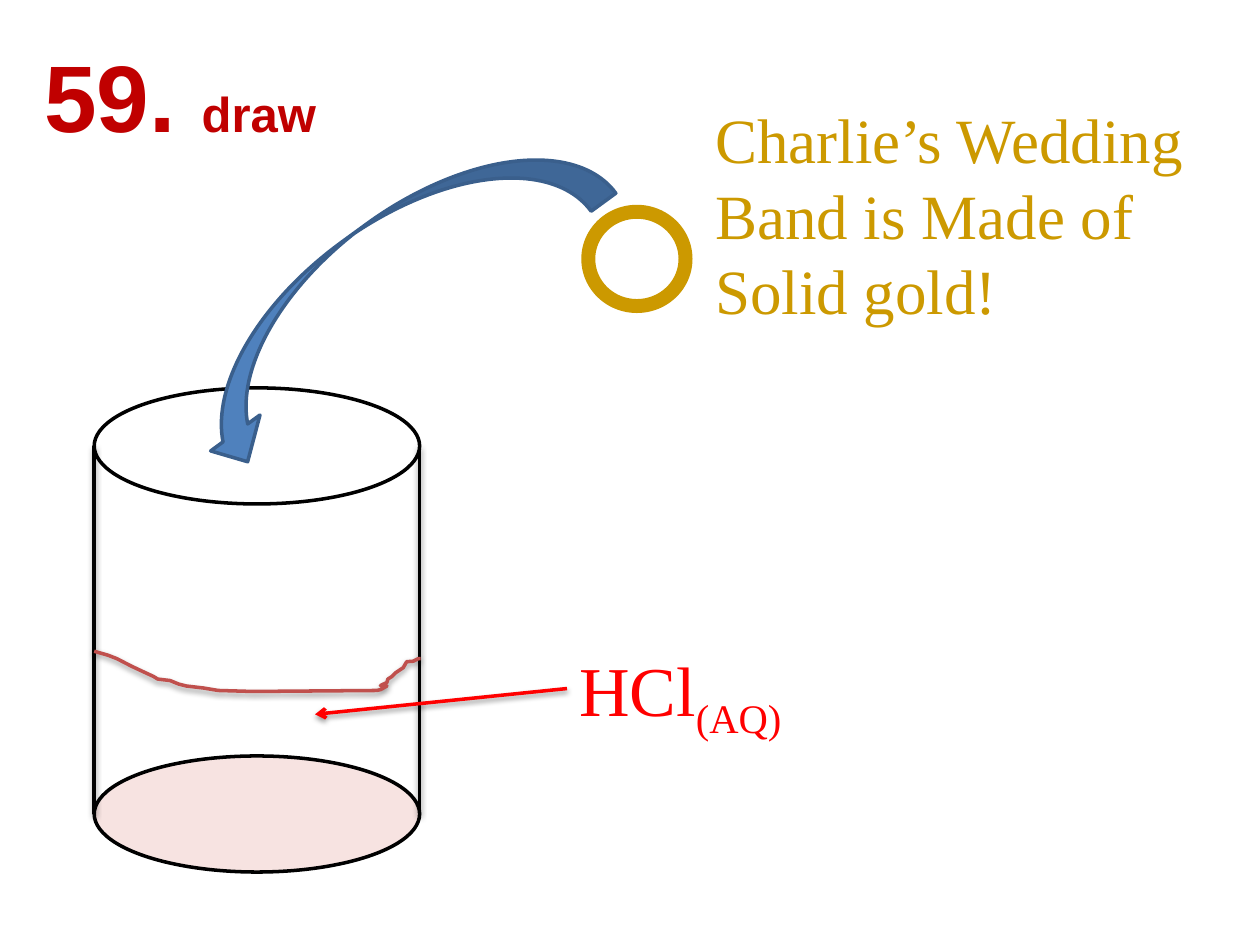
from dataclasses import dataclass

from lxml.etree import SubElement
from pptx import Presentation
from pptx.dml.color import RGBColor
from pptx.enum.shapes import MSO_CONNECTOR as CONN, MSO_SHAPE as SHAPE
from pptx.enum.text import MSO_AUTO_SIZE as AUTO
from pptx.oxml import parse_xml
from pptx.oxml.ns import nsdecls, qn
from pptx.util import Cm, Pt

BLACK = RGBColor(0x00, 0x00, 0x00)
WHITE = RGBColor(0xFF, 0xFF, 0xFF)
PINK = RGBColor(0xF7, 0xE3, 0xE1)
RED = RGBColor(0xFF, 0x00, 0x00)
DARK_RED = RGBColor(0xC0, 0x00, 0x00)
BRICK = RGBColor(0xC0, 0x50, 0x4D)
GOLD = RGBColor(0xCC, 0x99, 0x00)
BLUE = RGBColor(0x4F, 0x81, 0xBD)
NAVY = RGBColor(0x3A, 0x5F, 0x8C)

LEFT, RIGHT = 1.9, 8.46
RIM, BASE, OVAL_H = 8.99, 16.41, 2.34
LIQUID = [
    (1.9, 13.13), (2.18, 13.21), (2.36, 13.28), (2.65, 13.43), (2.82, 13.51),
    (3.1, 13.64), (3.18, 13.69), (3.43, 13.72), (3.6, 13.79), (3.76, 13.83),
    (4.1, 13.87), (4.4, 13.92), (5.1, 13.94), (7.6, 13.92), (7.68, 13.9),
    (7.8, 13.83), (7.67, 13.82), (7.8, 13.76), (7.82, 13.69), (7.9, 13.64),
    (7.98, 13.56), (8.13, 13.46), (8.2, 13.34), (8.33, 13.33), (8.43, 13.28),
    (8.48, 13.28),
]


@dataclass
class Figure:
    kind: SHAPE
    box: tuple
    fill: RGBColor | None
    line: RGBColor
    weight: float = 2
    rotation: float = 0


@dataclass
class Run:
    text: str
    size: float
    baseline: int = 0


@dataclass
class Label:
    box: tuple
    paragraphs: list
    font: str
    color: RGBColor
    bold: bool = False


def add_shadow(sp) -> None:
    sp._element.spPr.append(parse_xml(
        f'<a:effectLst {nsdecls("a")}><a:outerShdw blurRad="40000" dist="20000" '
        'dir="5400000" rotWithShape="0"><a:srgbClr val="000000">'
        '<a:alpha val="38000"/></a:srgbClr></a:outerShdw></a:effectLst>'))


def set_line(sp, color: RGBColor, weight: float = 2) -> None:
    sp.line.color.rgb = color
    sp.line.width = Pt(weight)


def add_figure(shapes, fig: Figure):
    sp = shapes.add_shape(fig.kind, *map(Cm, fig.box))
    sp.shadow.inherit = False
    sp.rotation = fig.rotation
    if fig.fill is None:
        sp.fill.background()
    else:
        sp.fill.solid()
        sp.fill.fore_color.rgb = fig.fill
    set_line(sp, fig.line, fig.weight)
    return sp


def add_line(shapes, start: tuple, end: tuple, color: RGBColor):
    line = shapes.add_connector(CONN.STRAIGHT, *map(Cm, start + end))
    set_line(line, color)
    add_shadow(line)
    return line


def add_label(shapes, label: Label):
    sp = shapes.add_textbox(*map(Cm, label.box))
    tf = sp.text_frame
    tf.word_wrap = True
    tf.auto_size = AUTO.SHAPE_TO_FIT_TEXT
    for i, runs in enumerate(label.paragraphs):
        p = tf.add_paragraph() if i else tf.paragraphs[0]
        for run in runs:
            r = p.add_run()
            r.text = run.text
            r.font.name = label.font
            r.font.size = Pt(run.size)
            r.font.bold = label.bold
            r.font.color.rgb = label.color
            if run.baseline:
                r.font._element.set("baseline", str(run.baseline))
    return sp


def add_liquid(shapes) -> None:
    points = [(Cm(x), Cm(y)) for x, y in LIQUID]
    builder = shapes.build_freeform(*points[0])
    builder.add_line_segments(points[1:], close=False)
    sp = builder.convert_to_shape()
    sp.fill.background()
    set_line(sp, BRICK)
    add_shadow(sp)


def main() -> None:
    """Build the slide of a gold ring dropped into a beaker of acid."""
    prs = Presentation()
    prs.slide_width, prs.slide_height = Cm(25.4), Cm(19.05)
    shapes = prs.slides.add_slide(prs.slide_layouts[6]).shapes

    for middle, fill in ((RIM, WHITE), (BASE, PINK)):
        box = (LEFT, middle - OVAL_H / 2, RIGHT - LEFT, OVAL_H)
        add_figure(shapes, Figure(SHAPE.OVAL, box, fill, BLACK))
    for x in (LEFT, RIGHT):
        add_line(shapes, (x, RIM), (x, BASE), BLACK)

    acid = add_label(shapes, Label(
        (11.43, 12.9, 6.99, 1.96), [[Run("HCl", 40), Run("(AQ)", 40, -25000)]],
        "Times New Roman", RED))
    pointer = add_line(shapes, (11.43, 13.97), (6.35, 14.4), RED)
    pointer.begin_connect(acid, 1)
    SubElement(pointer.line._get_or_add_ln(), qn("a:tailEnd"), type="arrow")
    add_liquid(shapes)

    add_figure(shapes, Figure(SHAPE.OVAL, (11.86, 4.27, 1.96, 1.9), None, GOLD, 8))
    add_figure(shapes, Figure(SHAPE.CURVED_RIGHT_ARROW, (6.5, 0.89, 2.46, 9.8),
                              BLUE, NAVY, rotation=53.9))
    add_label(shapes, Label(
        (14.17, 1.9, 11.23, 4.88),
        [[Run("Charlie’s Wedding Band is Made of", 36)], [Run("Solid gold!", 36)]],
        "Times New Roman", GOLD))
    add_label(shapes, Label((0.64, 0.64, 6.35, 2.57), [[Run("59. ", 54), Run("draw", 28)]],
                            "Arial", DARK_RED, bold=True))
    prs.save("out.pptx")


if __name__ == "__main__":
    main()
